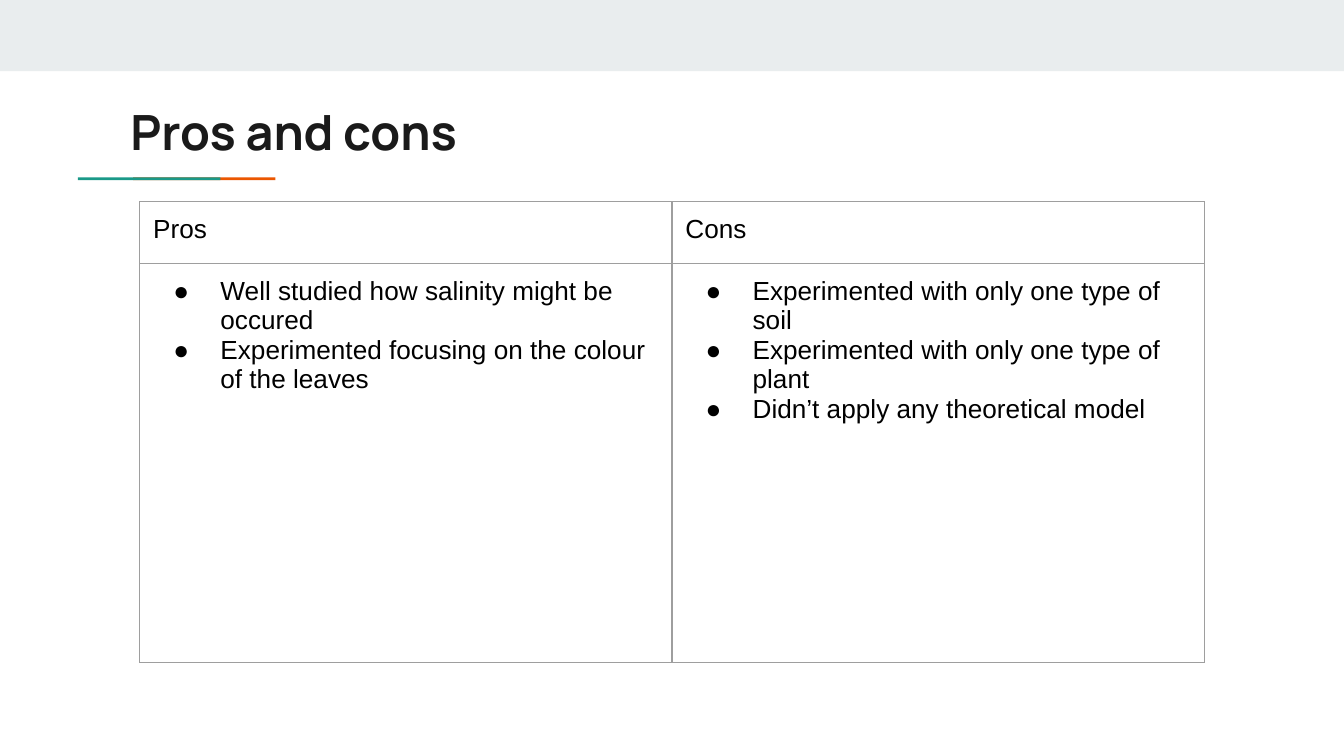
from lxml import etree
from pptx import Presentation
from pptx.dml.color import RGBColor
from pptx.enum.shapes import MSO_SHAPE
from pptx.enum.text import MSO_ANCHOR, MSO_AUTO_SIZE, PP_ALIGN
from pptx.oxml import parse_xml
from pptx.oxml.ns import nsdecls, qn
from pptx.util import Inches, Pt

RECT = MSO_SHAPE.RECTANGLE
TOP = MSO_ANCHOR.TOP
LEFT = PP_ALIGN.LEFT
NO_AUTOFIT = MSO_AUTO_SIZE.NONE
TITLE_ONLY = 5

THEME = {
    "band": "E9EDEE", "green": "1A9988", "orange": "EB5600",
    "title": "1A1A1A", "text": "000000", "border": "9E9E9E",
    "title_font": "Manrope", "text_font": "Arial",
    "title_size": 26, "text_size": 14, "border_width": 0.75,
}

COLUMNS = {
    "Pros": ["Well studied how salinity might be occured",
             "Experimented focusing on the colour of the leaves"],
    "Cons": ["Experimented with only one type of soil",
             "Experimented with only one type of plant",
             "Didn’t apply any theoretical model"],
}


def write(frame, *lines, font=THEME["text_font"], size=THEME["text_size"],
          color=THEME["text"], bold=False, bullet=None):
    """Fill a text frame with one formatted paragraph per line."""
    for index, line in enumerate(lines):
        paragraph = frame.paragraphs[0] if index == 0 else frame.add_paragraph()
        paragraph.alignment = LEFT
        run = paragraph.add_run()
        run.text = line
        run.font.name, run.font.size, run.font.bold = font, Pt(size), bold
        run.font.color.rgb = RGBColor.from_string(color)
        if bullet:
            properties = paragraph._p.get_or_add_pPr()
            properties.set("marL", str(Inches(0.5)))
            properties.set("indent", str(Inches(-0.35)))
            bullet_color = etree.SubElement(properties, qn("a:buClr"))
            etree.SubElement(bullet_color, qn("a:srgbClr"), val=color)
            etree.SubElement(properties, qn("a:buSzPts"), val=str(size * 100))
            etree.SubElement(properties, qn("a:buFont"), typeface=font)
            etree.SubElement(properties, qn("a:buChar"), char=bullet)


# Widescreen slide, 16:9
prs = Presentation()
prs.slide_width = Inches(10)
prs.slide_height = prs.slide_width * 9 // 16
slide = prs.slides.add_slide(prs.slide_layouts[TITLE_ONLY])

# Top band and the two overlapping accent bars
accent_left, accent_step, accent_width = 0.58, 0.41, 1.06
for left, top, width, height, color in [
    (0, 0, 10, 0.53, "band"),
    (accent_left + accent_step, 1.32, accent_width, 0.02, "orange"),
    (accent_left, 1.32, accent_width, 0.02, "green"),
]:
    bar = slide.shapes.add_shape(RECT, Inches(left), Inches(top), Inches(width), Inches(height))
    bar.shadow.inherit = False
    bar.fill.solid()
    bar.fill.fore_color.rgb = RGBColor.from_string(THEME[color])
    bar.line.fill.background()

# Title
title = slide.shapes.title
title.left, title.top, title.width, title.height = map(Inches, (0.87, 0.66, 8.41, 0.59))
heading = title.text_frame
heading.word_wrap, heading.auto_size, heading.vertical_anchor = True, NO_AUTOFIT, TOP
heading.margin_left = heading.margin_right = Inches(0.1)
heading.margin_top = heading.margin_bottom = Inches(0.1)
write(heading, "Pros and cons", font=THEME["title_font"], size=THEME["title_size"],
      color=THEME["title"], bold=True)

# Comparison table: a heading row above a row of lists
row_heights = (0.46, 2.97)
table = slide.shapes.add_table(len(row_heights), len(COLUMNS), Inches(1.04), Inches(1.5),
                               Inches(7.92), Inches(sum(row_heights))).table
table.first_row = table.horz_banding = False
for row, height in zip(table.rows, row_heights):
    row.height = Inches(height)

for column, (name, points) in enumerate(COLUMNS.items()):
    write(table.cell(0, column).text_frame, name)
    write(table.cell(1, column).text_frame, *points, bullet="●")

# Cell margins and borders
for cell in table.iter_cells():
    cell.margin_left = cell.margin_right = Inches(0.1)
    cell.margin_top = cell.margin_bottom = Inches(0.1)
    cell.vertical_anchor = TOP
    properties = cell._tc.get_or_add_tcPr()
    for side in ("lnL", "lnR", "lnT", "lnB"):
        properties.append(parse_xml(
            f'<a:{side} {nsdecls("a")} w="{Pt(THEME["border_width"])}"><a:solidFill>'
            f'<a:srgbClr val="{THEME["border"]}"/></a:solidFill></a:{side}>'))
    cell.fill.background()

prs.save("out.pptx")
